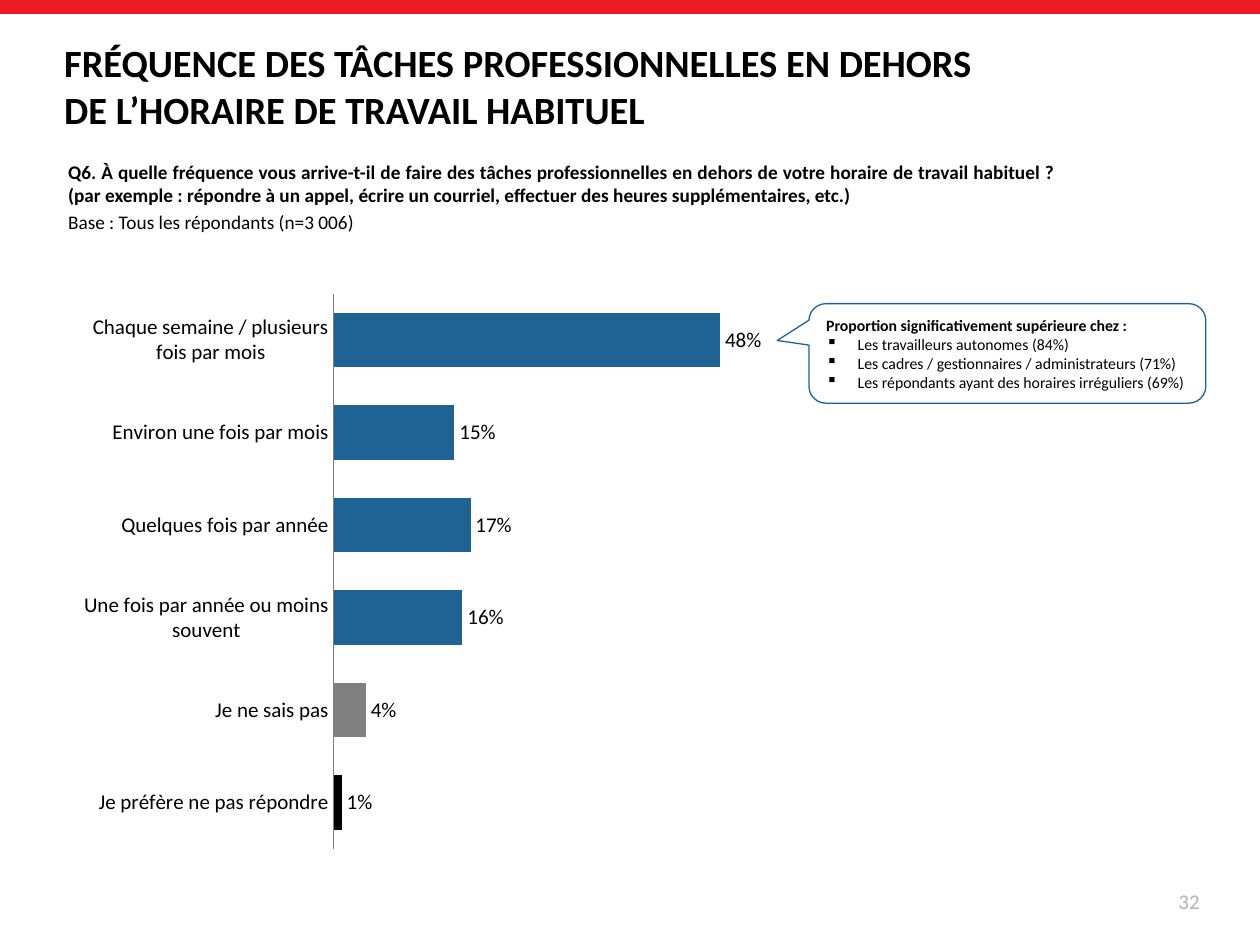
from dataclasses import dataclass
from pptx import Presentation
from pptx.chart.data import CategoryChartData
from pptx.dml.color import RGBColor
from pptx.enum.chart import XL_CHART_TYPE, XL_LABEL_POSITION, XL_TICK_MARK
from pptx.enum.shapes import MSO_SHAPE
from pptx.enum.text import MSO_ANCHOR, MSO_AUTO_SIZE, PP_ALIGN
from pptx.oxml import parse_xml
from pptx.oxml.ns import nsdecls
from pptx.util import Inches, Pt

COLS, ROWS = 100, 75
WIDE, HIGH = Inches(10), Inches(7.5)


@dataclass(frozen=True)
class Theme:
    face: str = "Calibri"
    red: str = "ED1C24"
    blue: str = "1F6394"
    gray: str = "808080"
    pale: str = "B3B3B3"
    black: str = "000000"
    white: str = "FFFFFF"
    title: float = 22
    label: float = 12
    body: float = 11
    note: float = 9


THEME = Theme()


def rgb(code):
    return RGBColor.from_string(code)


def grid(col, row, cols, rows):
    return (round(WIDE * col / COLS), round(HIGH * row / ROWS),
            round(WIDE * cols / COLS), round(HIGH * rows / ROWS))


def apply(item, style):
    for name, value in style.items():
        setattr(item, name, value)


def place(shape, box):
    apply(shape, dict(zip(("left", "top", "width", "height"), box)))


def style(font, size, color=THEME.black, bold=False):
    apply(font, {"name": THEME.face, "size": Pt(size), "bold": bold})
    font.color.rgb = rgb(color)


def bullet(para, indent=0, mark=None):
    props = para._p.get_or_add_pPr()
    apply_xml = {"marL": Inches(indent), "indent": -Inches(indent)}
    for name, value in apply_xml.items():
        props.set(name, str(int(value)))
    tag = f'a:buChar {nsdecls("a")} char="{mark}"' if mark else f'a:buNone {nsdecls("a")}'
    props.append(parse_xml(f"<{tag}/>"))


def write(frame, lines, size, color=THEME.black, align=PP_ALIGN.LEFT,
          anchor=MSO_ANCHOR.TOP, gap=0, mark=None):
    apply(frame, {"word_wrap": True, "auto_size": MSO_AUTO_SIZE.NONE,
                  "vertical_anchor": anchor})
    for spot, (text, bold) in enumerate(lines):
        para = frame.paragraphs[0] if spot == 0 else frame.add_paragraph()
        para.text = text
        apply(para, {"alignment": align, "space_before": Pt(gap if spot else 0)})
        bullet(para, *((0.25, mark) if mark and spot else ()))
        style(para.font, size, color, bold)


def banner(slide, box):
    bar = slide.shapes.add_shape(MSO_SHAPE.RECTANGLE, *box)
    bar.shadow.inherit = False
    bar.fill.solid()
    bar.fill.fore_color.rgb = rgb(THEME.red)
    bar.line.fill.background()


def heading(slide, box):
    title = slide.shapes.title
    place(title, box)
    text = ("FRÉQUENCE DES TÂCHES PROFESSIONNELLES EN DEHORS "
            "DE L’HORAIRE DE TRAVAIL HABITUEL")
    write(title.text_frame, [(text, True)], THEME.title, anchor=MSO_ANCHOR.MIDDLE)


def question(slide, box):
    body = slide.placeholders[1]
    place(body, box)
    text = ("Q6. À quelle fréquence vous arrive-t-il de faire des tâches "
            "professionnelles en dehors de votre horaire de travail habituel ? "
            "(par exemple : répondre à un appel, écrire un courriel, "
            "effectuer des heures supplémentaires, etc.)")
    lines = [(text, True), ("Base : Tous les répondants (n=3 006)", False)]
    write(body.text_frame, lines, THEME.body, align=PP_ALIGN.JUSTIFY, gap=2)


def layout(chart, shares):
    area = chart.element.chart.plotArea
    for old in area.findall("{*}layout"):
        area.remove(old)
    spots = "".join(f'<c:{key} val="{val}"/>' for key, val in shares.items())
    area.insert(0, parse_xml(
        f'<c:layout {nsdecls("c")}><c:manualLayout><c:layoutTarget val="inner"/>'
        f'<c:xMode val="edge"/><c:yMode val="edge"/>{spots}'
        '</c:manualLayout></c:layout>'))


def bars(slide, box):
    rates = {
        "Chaque semaine / plusieurs fois par mois": 0.48,
        "Environ une fois par mois": 0.15,
        "Quelques fois par année": 0.17,
        "Une fois par année ou moins souvent": 0.16,
        "Je ne sais pas": 0.04,
        "Je préfère ne pas répondre": 0.01,
    }
    data = CategoryChartData(number_format="0%")
    data.categories = list(rates)
    data.add_series("Fréquence", list(rates.values()))
    chart = slide.shapes.add_chart(XL_CHART_TYPE.BAR_CLUSTERED, *box, data).chart
    apply(chart, {"has_legend": False, "has_title": False})
    style(chart.font, THEME.label)
    layout(chart, {"x": 0.24, "y": 0.06, "w": 0.76, "h": 0.94})

    axis = chart.category_axis
    apply(axis, {"reverse_order": True, "has_major_gridlines": False,
                 "major_tick_mark": XL_TICK_MARK.NONE})
    axis.format.line.color.rgb = rgb(THEME.gray)
    apply(chart.value_axis, {"minimum_scale": 0, "maximum_scale": 1,
                             "has_major_gridlines": False, "visible": False})

    plot = chart.plots[0]
    apply(plot, {"gap_width": 70, "vary_by_categories": False,
                 "has_data_labels": True})
    apply(plot.data_labels, {"show_value": True, "number_format": "0%",
                             "number_format_is_linked": False,
                             "position": XL_LABEL_POSITION.OUTSIDE_END})
    style(plot.data_labels.font, THEME.label)
    series = plot.series[0]
    fills = [(series, THEME.blue), (series.points[4], THEME.gray),
             (series.points[5], THEME.black)]
    for part, color in fills:
        part.format.fill.solid()
        part.format.fill.fore_color.rgb = rgb(color)


def callout(slide, box):
    note = slide.shapes.add_shape(MSO_SHAPE.ROUNDED_RECTANGULAR_CALLOUT, *box)
    note.shadow.inherit = False
    for spot, value in enumerate((-0.58, -0.13, 0.17)):
        note.adjustments[spot] = value
    note.fill.solid()
    note.fill.fore_color.rgb = rgb(THEME.white)
    note.line.color.rgb = rgb(THEME.blue)
    note.line.width = Pt(0.75)
    lines = [("Proportion significativement supérieure chez :", True),
             ("Les travailleurs autonomes (84%)", False),
             ("Les cadres / gestionnaires / administrateurs (71%)", False),
             ("Les répondants ayant des horaires irréguliers (69%)", False)]
    write(note.text_frame, lines, THEME.note, anchor=MSO_ANCHOR.MIDDLE, mark="▪")


def folio(slide, box):
    page = slide.shapes.add_textbox(*box)
    write(page.text_frame, [("32", False)], THEME.label, THEME.pale,
          PP_ALIGN.RIGHT, MSO_ANCHOR.MIDDLE)


def main():
    deck = Presentation()
    apply(deck, {"slide_width": WIDE, "slide_height": HIGH})
    slide = deck.slides.add_slide(deck.slide_layouts[1])
    banner(slide, grid(0, 0, COLS, 1.1))
    folio(slide, grid(72.9, 69.5, 23.3, 4))
    question(slide, grid(4.4, 12.2, 80.4, 11.8))
    heading(slide, grid(4.1, 4.2, 76.6, 5.2))
    bars(slide, grid(6.3, 20.5, 84.1, 46.9))
    callout(slide, grid(64.2, 24.1, 31.5, 7.9))
    deck.save("out.pptx")


if __name__ == "__main__":
    main()
